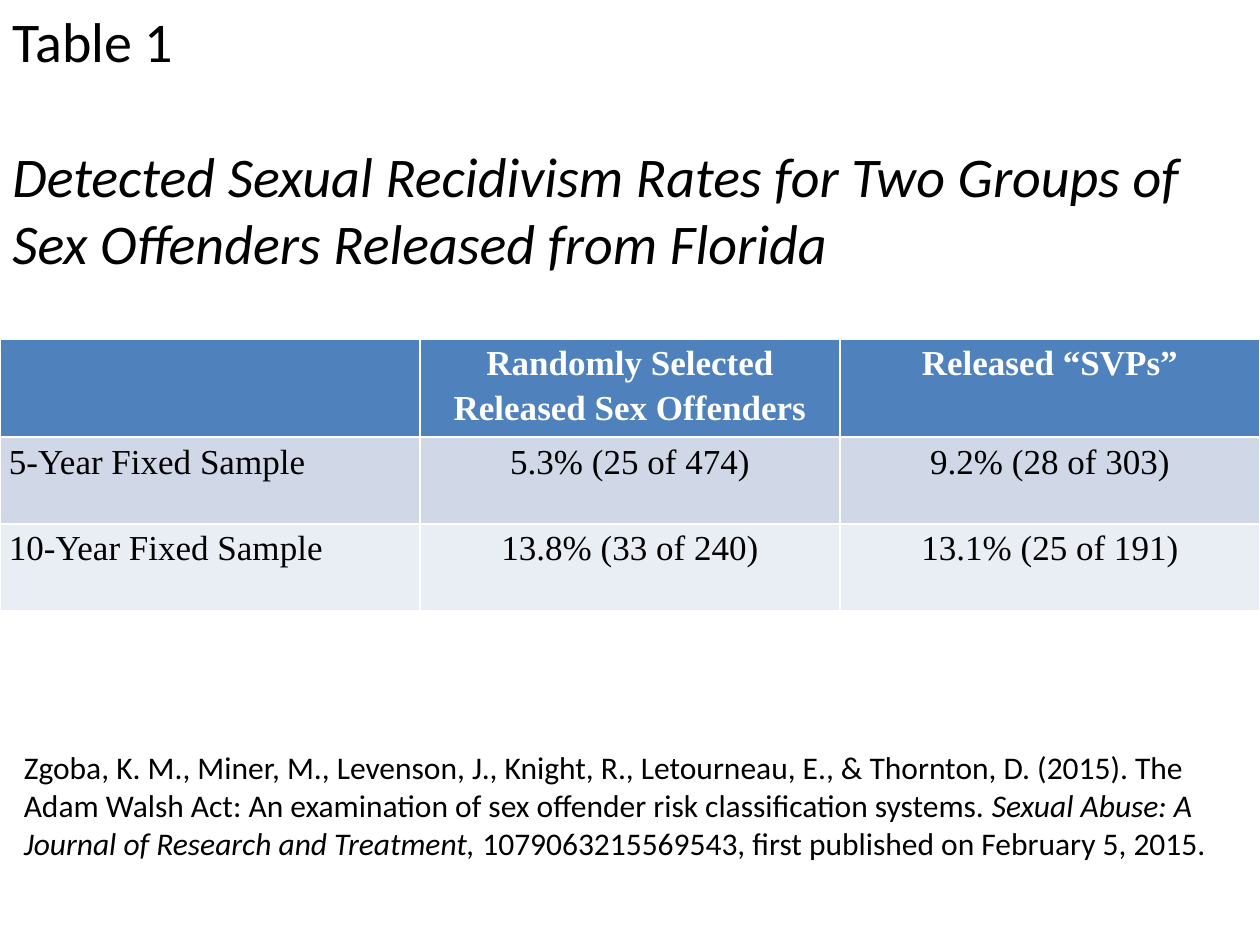
from pptx import Presentation
from pptx.dml.color import RGBColor
from pptx.enum.text import MSO_AUTO_SIZE, PP_ALIGN
from pptx.util import Cm, Pt

CENTER, JUSTIFY = PP_ALIGN.CENTER, PP_ALIGN.JUSTIFY
FIT_SHAPE = MSO_AUTO_SIZE.SHAPE_TO_FIT_TEXT
BLACK = RGBColor(0x00, 0x00, 0x00)
WHITE = RGBColor(0xFF, 0xFF, 0xFF)
HEADER_BLUE = RGBColor(0x4F, 0x81, 0xBD)
BAND_DARK = RGBColor(0xD0, 0xD8, 0xE8)
BAND_LIGHT = RGBColor(0xE9, 0xED, 0xF4)


def style_font(paragraph, name, size, color):
    paragraph.font.name = name
    paragraph.font.size = Pt(size)
    paragraph.font.color.rgb = color


def add_text_frame(slide, left, top, width, height):
    text_box = slide.shapes.add_textbox(Cm(left), Cm(top), Cm(width), Cm(height))
    text_box.text_frame.word_wrap = True
    text_box.text_frame.auto_size = FIT_SHAPE
    return text_box.text_frame


presentation = Presentation()
presentation.slide_width = Cm(25.4)
presentation.slide_height = Cm(19.05)
slide = presentation.slides.add_slide(presentation.slide_layouts[6])

# Recidivism table; white rules come from the default table style
rows = [
    ("", "Randomly Selected Released Sex Offenders", "Released “SVPs”"),
    ("5-Year Fixed Sample", "5.3% (25 of 474)", "9.2% (28 of 303)"),
    ("10-Year Fixed Sample", "13.8% (33 of 240)", "13.1% (25 of 191)"),
]
row_heights = [1.98, 1.75, 1.75]
row_fills = [HEADER_BLUE, BAND_DARK, BAND_LIGHT]
table = slide.shapes.add_table(
    len(rows), len(rows[0]), Cm(0), Cm(6.83), Cm(25.4), Cm(sum(row_heights))
).table
for row_index, texts in enumerate(rows):
    table.rows[row_index].height = Cm(row_heights[row_index])
    is_header = row_index == 0
    for column_index, text in enumerate(texts):
        cell = table.cell(row_index, column_index)
        cell.fill.solid()
        cell.fill.fore_color.rgb = row_fills[row_index]
        cell.margin_left = cell.margin_right = Cm(0.18)
        cell.margin_top = cell.margin_bottom = Cm(0)
        cell.text = text
        paragraph = cell.text_frame.paragraphs[0]
        paragraph.alignment = CENTER if is_header or column_index else JUSTIFY
        paragraph.line_spacing = 1.15
        style_font(paragraph, "Times New Roman", 20, WHITE if is_header else BLACK)
        paragraph.font.bold = is_header

# Table number and title
title_frame = add_text_frame(slide, 0, 0, 25.17, 5.74)
number_paragraph = title_frame.paragraphs[0]
number_paragraph.text = "Table 1"
title_paragraph = title_frame.add_paragraph()
title_paragraph.text = (
    "Detected Sexual Recidivism Rates for Two Groups of "
    "Sex Offenders Released from Florida"
)
title_paragraph.space_before = Pt(39)
title_paragraph.font.italic = True
for paragraph in title_frame.paragraphs:
    style_font(paragraph, "Calibri", 32, BLACK)

# Source citation
citation = add_text_frame(slide, 0.23, 14.96, 25.17, 2.57).paragraphs[0]
style_font(citation, "Calibri", 18, BLACK)
for text, italic in [
    ("Zgoba, K. M., Miner, M., Levenson, J., Knight, R., Letourneau, E., & "
     "Thornton, D. (2015). The Adam Walsh Act: An examination of sex offender "
     "risk classification systems. ", False),
    ("Sexual Abuse: A Journal of Research and Treatment, ", True),
    ("1079063215569543, first published on February 5, 2015.", False),
]:
    run = citation.add_run()
    run.text = text
    run.font.italic = italic

presentation.save("out.pptx")
